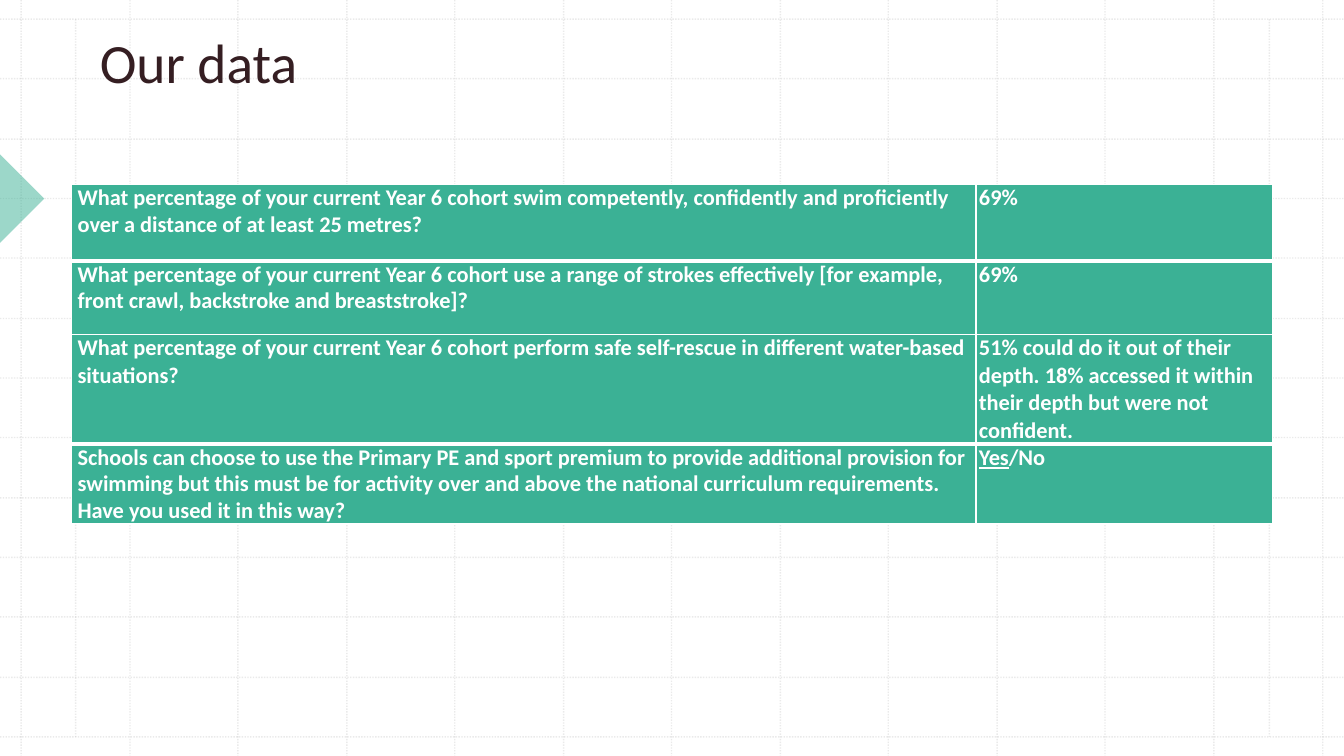
from lxml import etree
from pptx import Presentation, util as u
from pptx.dml import color as c
from pptx.enum import dml, shapes, text
from pptx.oxml import ns

GREEN = c.RGBColor(0x3B, 0xB1, 0x95)
PLUM = c.RGBColor(0x35, 0x1E, 0x22)
GREY = c.RGBColor(0xBC, 0xBC, 0xBC)
WHITE = c.RGBColor(0xFF, 0xFF, 0xFF)
FONT = "Calibri"
WIDE, HIGH = 1333, 750
COLS = (897, 294)
ROWS = (76, 73, 106, 77)
RULES = (1, 3, 1, 3, 1)
DATA = [
    ([("What percentage of your current Year 6 cohort swim competently, confidently "
       "and proficiently over a distance of at least 25 metres?", False)],
     [("69%", False)], 0.97),
    ([("What percentage of your current Year 6 cohort use a range of strokes effectively "
       "[for example, front crawl, backstroke and breaststroke]?", False)],
     [("69%", False)], 0.97),
    ([("What percentage of your current Year 6 cohort perform safe self-rescue in "
       "different water-based situations?", False)],
     [("51% could do it out of their depth. 18% accessed it within their depth "
       "but were not confident.", False)], 1.0),
    ([("Schools can choose to use the Primary PE and sport premium to provide additional "
       "provision for swimming but this must be for activity over and above the national "
       "curriculum requirements. Have you used it in this way?", False)],
     [("Yes", True), ("/No", False)], 0.97),
]


def px(n):
    return u.Emu(n * 9144)


class Deck:
    """Holds the style and the current slide."""

    def __init__(self):
        self.show = Presentation()
        self.show.slide_width, self.show.slide_height = px(WIDE), px(HIGH)
        self.slide = self.show.slides.add_slide(self.show.slide_layouts[5])
        self.items = self.slide.shapes

    def fade(self, fill, part):
        tint = fill._xPr.find(".//" + ns.qn("a:srgbClr"))
        etree.SubElement(tint, ns.qn("a:alpha"), val=str(part * 1000))

    def line(self, x1, y1, x2, y2):
        rule = self.items.add_connector(
            shapes.MSO_CONNECTOR.STRAIGHT, px(x1), px(y1), px(x2), px(y2))
        rule.line.width = u.Pt(1)
        rule.line.color.rgb = GREY
        rule.line.dash_style = dml.MSO_LINE.ROUND_DOT
        self.fade(rule.line.fill, 30)
        etree.SubElement(rule._element.spPr, ns.qn("a:effectLst"))

    def grid(self):
        for i in range(13):
            x, y = round(21 + i * 107.55), round(19 + i * 59.35)
            self.line(x, 0, x, HIGH)
            self.line(0, y, WIDE, y)
        for x in (75, 1259):
            self.line(x, 19, x, 731)

    def arrow(self, x, y, size):
        mark = self.items.add_shape(
            shapes.MSO_SHAPE.RIGHT_TRIANGLE, px(x), px(y), px(size), px(size))
        mark.rotation = 225
        mark.shadow.inherit = False
        mark.fill.solid()
        mark.fill.fore_color.rgb = GREEN
        self.fade(mark.fill, 50)
        mark.line.fill.background()

    def run(self, para, words, size, tint, bold=False, under=False):
        run = para.add_run()
        run.text = words
        font = run.font
        font.name, font.size, font.bold = FONT, u.Pt(size), bold
        font.color.rgb = tint
        if under:
            font.underline = True

    def title(self, words, x, y, w, h):
        head = self.items.title
        self.items._spTree.append(head._element)
        head.left, head.top, head.width, head.height = map(px, (x, y, w, h))
        frame = head.text_frame
        frame.word_wrap = True
        frame.auto_size = text.MSO_AUTO_SIZE.NONE
        frame.vertical_anchor = text.MSO_ANCHOR.BOTTOM
        para = frame.paragraphs[0]
        para.alignment = text.PP_ALIGN.LEFT
        self.run(para, words, 39.6, PLUM)

    def edge(self, cell, side, width):
        props = cell._tc.get_or_add_tcPr()
        edge = etree.SubElement(props, ns.qn("a:ln" + side), w=str(u.Pt(width)))
        fill = etree.SubElement(edge, ns.qn("a:solidFill"))
        etree.SubElement(fill, ns.qn("a:srgbClr"), val=str(WHITE))

    def cell(self, cell, runs, inset, space, rules):
        cell.margin_left = cell.margin_right = cell.margin_top = cell.margin_bottom = 0
        for side, width in zip("LRTB", (1, 1, *rules)):
            self.edge(cell, side, width)
        cell.fill.solid()
        cell.fill.fore_color.rgb = GREEN
        para = cell.text_frame.paragraphs[0]
        para.line_spacing = space
        props = para._p.get_or_add_pPr()
        props.set("marL", str(px(inset)))
        props.set("indent", "0")
        for words, under in runs:
            self.run(para, words, 16, WHITE, True, under)

    def table(self, x, y):
        grid = self.items.add_table(
            len(ROWS), len(COLS), px(x), px(y), px(sum(COLS)), px(sum(ROWS))).table
        for col, w in zip(grid.columns, COLS):
            col.width = px(w)
        for i, (ask, reply, space) in enumerate(DATA):
            grid.rows[i].height = px(ROWS[i])
            rules = RULES[i:i + 2]
            self.cell(grid.cell(i, 0), ask, 6, space, rules)
            self.cell(grid.cell(i, 1), reply, 3, 1.0, rules)


def main():
    deck = Deck()
    deck.grid()
    deck.arrow(-31, 166, 62)
    deck.title("Our data", 89, 18, 1129, 81)
    deck.table(71, 183)
    deck.show.save("out.pptx")


if __name__ == "__main__":
    main()
